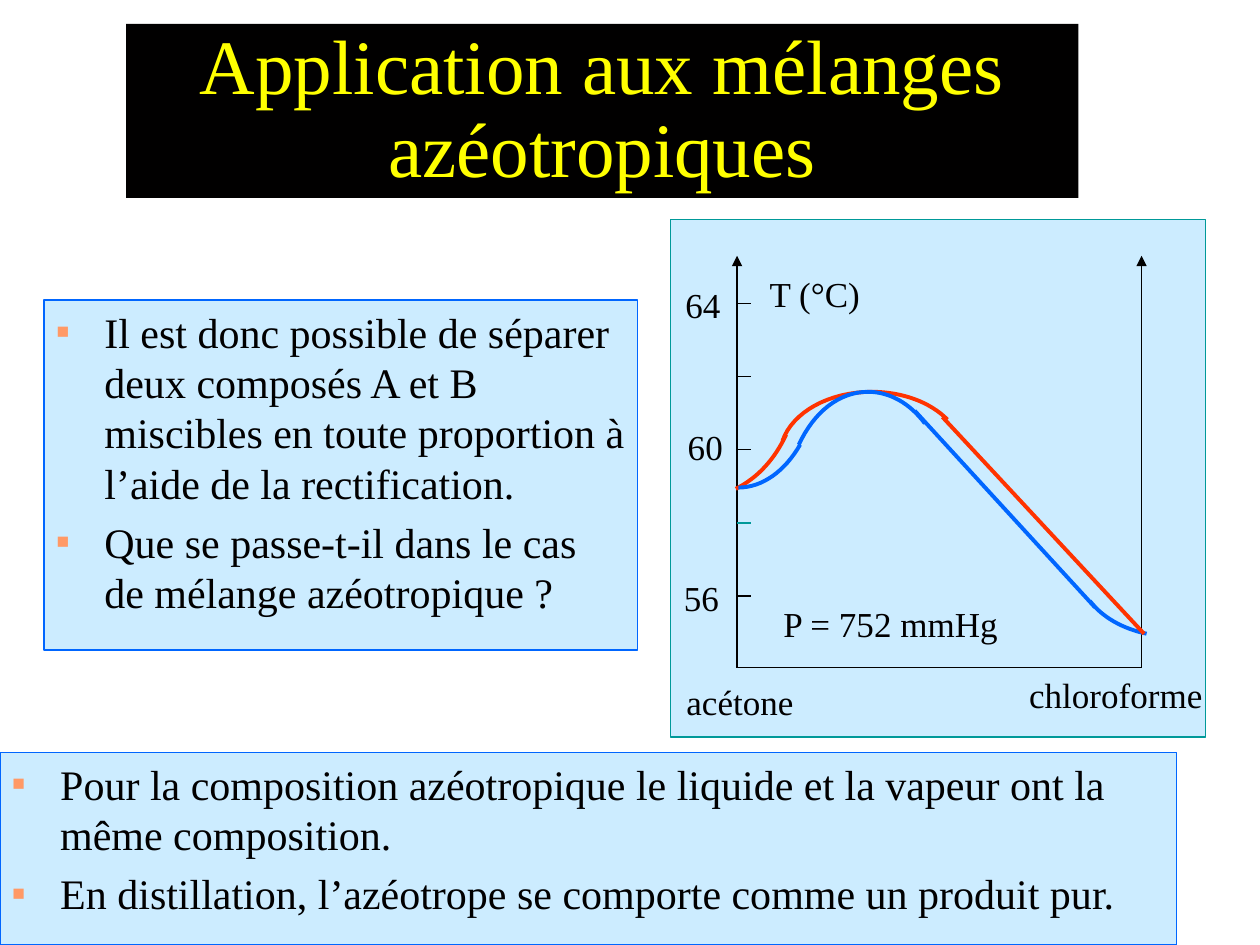
from dataclasses import dataclass

from lxml import etree
from pptx import Presentation
from pptx.dml.color import RGBColor
from pptx.enum.shapes import MSO_CONNECTOR, MSO_SHAPE
from pptx.enum.text import MSO_ANCHOR, PP_ALIGN
from pptx.oxml.ns import qn
from pptx.util import Inches, Pt


@dataclass(frozen=True)
class Theme:
    font: str = "Times New Roman"
    ink: str = "010000"
    yellow: str = "FFFF00"
    pale: str = "CCECFF"
    blue: str = "0066FF"
    teal: str = "009999"
    red: str = "FF3300"
    bullet: str = "FF9966"
    title_size: int = 44
    body_size: int = 24
    label_size: int = 20
    thin: float = 0.75
    thick: float = 2.25


THEME = Theme()
AXIS_LEFT, AXIS_RIGHT = 5.85, 9.06
AXIS_TOP, AXIS_BOTTOM = 2.03, 5.3
TICK_TOP, TICK_STEP, TICK_COUNT = 2.41, 0.58, 5


def rgb(value):
    return RGBColor.from_string(value)


def style_font(p, size, color):
    for r in p.runs:
        r.font.name = THEME.font
        r.font.size = Pt(size)
        r.font.color.rgb = rgb(color)


def style_line(sp, color, width):
    sp.line.color.rgb = rgb(color)
    sp.line.width = Pt(width)


def add_title(slide, text):
    sp = slide.shapes.title
    sp.left, sp.top, sp.width, sp.height = map(Inches, (1, 0.19, 7.56, 1.38))
    sp.fill.solid()
    sp.fill.fore_color.rgb = rgb(THEME.ink)
    tf = sp.text_frame
    tf.text = text
    tf.word_wrap = True
    tf.vertical_anchor = MSO_ANCHOR.MIDDLE
    p = tf.paragraphs[0]
    p.alignment = PP_ALIGN.CENTER
    p.line_spacing = 0.9
    style_font(p, THEME.title_size, THEME.yellow)


def add_panel(slide, box, border):
    sp = slide.shapes.add_shape(MSO_SHAPE.RECTANGLE, *map(Inches, box))
    sp.shadow.inherit = False
    sp.fill.solid()
    sp.fill.fore_color.rgb = rgb(THEME.pale)
    style_line(sp, border, THEME.thin)
    return sp


def set_bullet(p):
    pPr = p._p.get_or_add_pPr()
    pPr.set("marL", str(Inches(0.38)))
    pPr.set("indent", str(Inches(-0.38)))
    color = etree.SubElement(pPr, qn("a:buClr"))
    etree.SubElement(color, qn("a:srgbClr"), val=THEME.bullet)
    etree.SubElement(pPr, qn("a:buSzPct"), val="50000")
    etree.SubElement(pPr, qn("a:buFont"), typeface=THEME.font)
    etree.SubElement(pPr, qn("a:buChar"), char="■")


def add_bullets(slide, box, items):
    tf = add_panel(slide, box, THEME.blue).text_frame
    tf.word_wrap = True
    tf.vertical_anchor = MSO_ANCHOR.TOP
    for i, item in enumerate(items):
        p = tf.add_paragraph() if i else tf.paragraphs[0]
        p.text = item
        p.alignment = PP_ALIGN.LEFT
        set_bullet(p)
        if i:
            p.space_before = Pt(5)
        style_font(p, THEME.body_size, THEME.ink)


def add_label(slide, text, left, top, width):
    box = map(Inches, (left, top, width, 0.43))
    tf = slide.shapes.add_textbox(*box).text_frame
    tf.word_wrap = True
    tf.text = text
    style_font(tf.paragraphs[0], THEME.label_size, THEME.ink)


def add_line(slide, start, end, color=THEME.ink, width=THEME.thin, arrow=False):
    line = slide.shapes.add_connector(
        MSO_CONNECTOR.STRAIGHT, *map(Inches, (*start, *end)))
    style_line(line, color, width)
    if arrow:
        etree.SubElement(line.line._get_or_add_ln(), qn("a:tailEnd"), type="triangle")
    etree.SubElement(line._element.spPr, qn("a:effectLst"))


def bezier(p0, p1, p2, p3, steps=16):
    for i in range(steps + 1):
        t = i / steps
        u = 1 - t
        yield tuple(Inches(u**3 * a + 3 * u * u * t * b + 3 * u * t * t * c + t**3 * d)
                    for a, b, c, d in zip(p0, p1, p2, p3))


def add_curve(slide, color, points):
    vertices = [pt for i in range(0, len(points) - 1, 3)
                for pt in list(bezier(*points[i:i + 4]))[bool(i):]]
    builder = slide.shapes.build_freeform(*vertices[0])
    builder.add_line_segments(vertices[1:], close=False)
    sp = builder.convert_to_shape()
    sp.shadow.inherit = False
    sp.fill.background()
    style_line(sp, color, THEME.thick)


def add_axes(slide):
    add_line(slide, (AXIS_LEFT, AXIS_BOTTOM), (AXIS_RIGHT, AXIS_BOTTOM))
    for x in (AXIS_LEFT, AXIS_RIGHT):
        add_line(slide, (x, AXIS_BOTTOM), (x, AXIS_TOP), arrow=True)
    for i in range(TICK_COUNT):
        y = TICK_TOP + i * TICK_STEP
        color = THEME.teal if i == 3 else THEME.ink
        add_line(slide, (AXIS_LEFT, y), (AXIS_LEFT + 0.11, y), color)


def add_diagram(slide):
    add_panel(slide, (5.32, 1.74, 4.25, 4.11), THEME.teal)
    add_axes(slide)
    for label in (
        ("T (°C)", 6.01, 2.11, 1.18),
        ("acétone", 5.35, 5.35, 1.13),
        ("chloroforme", 8.07, 5.3, 1.66),
        ("64", 5.34, 2.2, 0.62),
        ("60", 5.36, 3.33, 0.62),
        ("56", 5.33, 4.53, 0.62),
        ("P = 752 mmHg", 6.12, 4.73, 2.14),
    ):
        add_label(slide, *label)
    for color, points in (
        (THEME.red, [(5.84, 3.88), (6.02, 3.79), (6.15, 3.64), (6.24, 3.45)]),
        (THEME.red, [(7.52, 3.33), (7.38, 3.19), (7.16, 3.11), (6.92, 3.11),
                     (6.58, 3.11), (6.29, 3.27), (6.21, 3.5)]),
        (THEME.blue, [(5.86, 3.87), (6.05, 3.87), (6.23, 3.74), (6.35, 3.53)]),
        (THEME.blue, [(7.34, 3.36), (7.22, 3.2), (7.06, 3.11), (6.89, 3.11),
                      (6.66, 3.11), (6.46, 3.27), (6.34, 3.53)]),
        (THEME.blue, [(9.1, 5.03), (8.91, 4.99), (8.75, 4.9), (8.65, 4.77)]),
    ):
        add_curve(slide, color, points)
    add_line(slide, (9.08, 5.03), (7.48, 3.31), THEME.red, THEME.thick)
    add_line(slide, (7.26, 3.26), (8.69, 4.82), THEME.blue, THEME.thick)


def main():
    prs = Presentation()
    prs.slide_width, prs.slide_height = Inches(10), Inches(7.5)
    slide = prs.slides.add_slide(prs.slide_layouts[5])
    add_title(slide, "Application aux mélanges azéotropiques")
    add_bullets(slide, (0.35, 2.38, 4.71, 2.78), (
        "Il est donc possible de séparer deux composés A et B miscibles en "
        "toute proportion à l’aide de la rectification.",
        "Que se passe-t-il dans le cas de mélange azéotropique ?",
    ))
    add_diagram(slide)
    add_bullets(slide, (0, 5.97, 9.34, 1.53), (
        "Pour la composition azéotropique le liquide et la vapeur ont la "
        "même composition.",
        "En distillation, l’azéotrope se comporte comme un produit pur.",
    ))
    prs.save("out.pptx")


if __name__ == "__main__":
    main()
